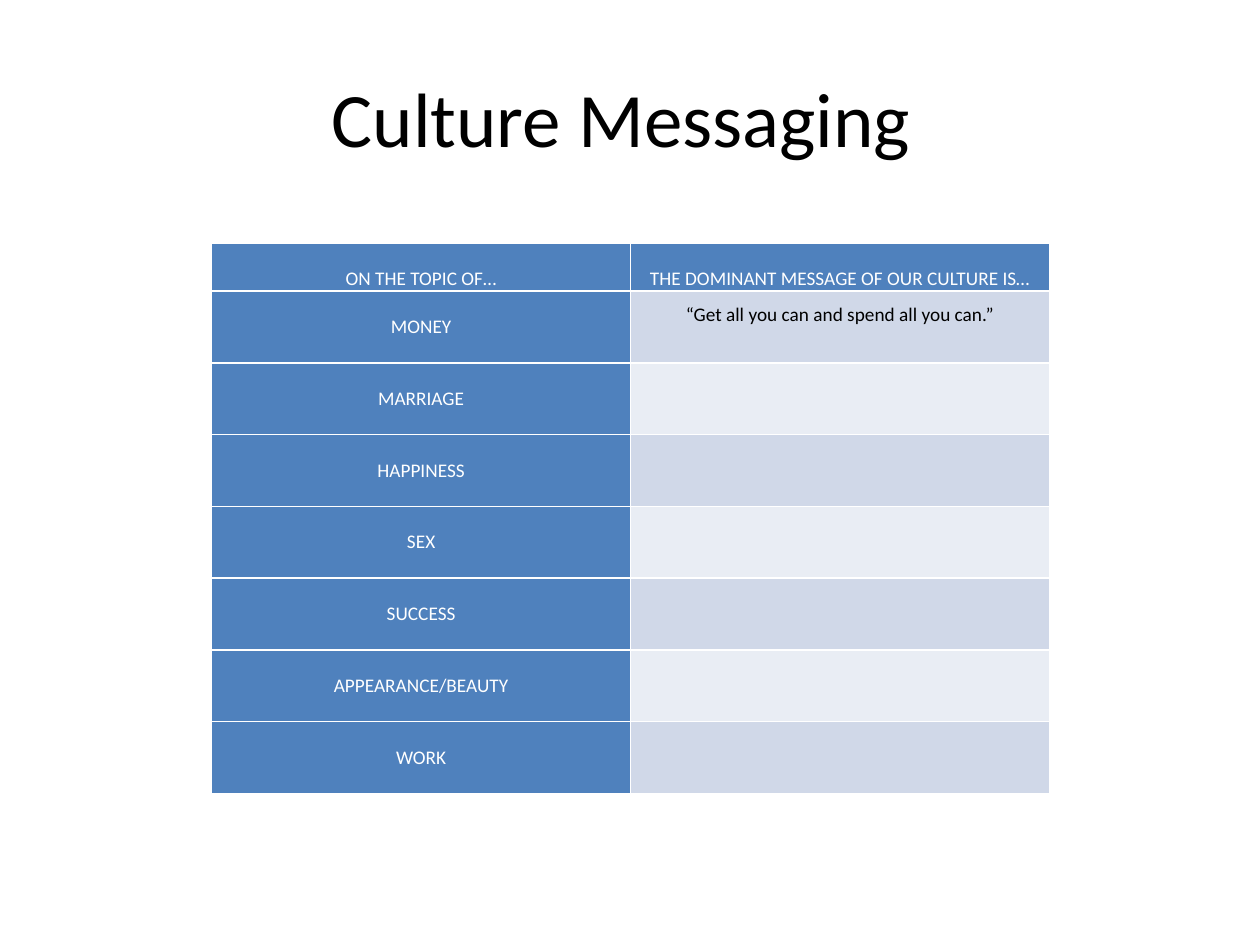
"""Build the Culture Messaging slide with its table of topics and messages."""
import pptx
import pptx.dml.color
import pptx.enum.text
import pptx.oxml.ns
import pptx.util
from lxml import etree

Inches = pptx.util.Inches
RGBColor = pptx.dml.color.RGBColor
Anchor = pptx.enum.text.MSO_ANCHOR

WHITE = RGBColor(0xFF, 0xFF, 0xFF)
BLACK = RGBColor(0x00, 0x00, 0x00)
BLUE = RGBColor(0x4F, 0x81, 0xBD)
BAND_DARK = RGBColor(0xD0, 0xD8, 0xE8)
BAND_LIGHT = RGBColor(0xE9, 0xED, 0xF4)

ROWS = [
    ("ON THE TOPIC OF…", "THE DOMINANT MESSAGE OF OUR CULTURE IS…"),
    ("MONEY", "“Get all you can and spend all you can.”"),
    ("MARRIAGE", ""),
    ("HAPPINESS", ""),
    ("SEX", ""),
    ("SUCCESS", ""),
    ("APPEARANCE/BEAUTY", ""),
    ("WORK", ""),
]


def format_text(text_frame, size, color):
    for paragraph in text_frame.paragraphs:
        paragraph.alignment = pptx.enum.text.PP_ALIGN.CENTER
        for run in paragraph.runs:
            run.font.name = "Calibri"
            run.font.size = pptx.util.Pt(size)
            run.font.bold = False
            run.font.color.rgb = color


def add_borders(cell, color):
    properties = cell._tc.get_or_add_tcPr()
    for side in ("a:lnL", "a:lnR", "a:lnT", "a:lnB"):
        line = etree.SubElement(properties, pptx.oxml.ns.qn(side), w=str(pptx.util.Pt(1)))
        fill = etree.SubElement(line, pptx.oxml.ns.qn("a:solidFill"))
        etree.SubElement(fill, pptx.oxml.ns.qn("a:srgbClr"), val=str(color))


presentation = pptx.Presentation()
presentation.slide_width = Inches(10)
presentation.slide_height = Inches(7.5)
slide = presentation.slides.add_slide(presentation.slide_layouts[5])

title = slide.shapes.title
title.left, title.top = Inches(0.5), Inches(0.3)
title.width, title.height = Inches(9), Inches(1.25)
title.text_frame.text = "Culture Messaging "
title.text_frame.vertical_anchor = Anchor.MIDDLE
format_text(title.text_frame, 44, BLACK)

table = slide.shapes.add_table(
    len(ROWS), 2, Inches(1.68), Inches(1.93), Inches(6.65), Inches(4.34)
).table
table.first_col = True

for row_index, texts in enumerate(ROWS):
    is_header = row_index == 0
    table.rows[row_index].height = Inches(0.38 if is_header else 0.57)
    for column_index, text in enumerate(texts):
        is_label = is_header or column_index == 0
        band = BAND_DARK if row_index % 2 else BAND_LIGHT
        cell = table.cell(row_index, column_index)
        cell.margin_left = cell.margin_right = Inches(0.07)
        cell.margin_top = Inches(0)
        cell.margin_bottom = Inches(0 if is_label else 0.19)
        cell.vertical_anchor = Anchor.BOTTOM if is_header else Anchor.MIDDLE
        add_borders(cell, WHITE)
        cell.fill.solid()
        cell.fill.fore_color.rgb = BLUE if is_label else band
        cell.text_frame.text = text
        format_text(cell.text_frame, 11, WHITE if is_label else BLACK)

presentation.save("out.pptx")
